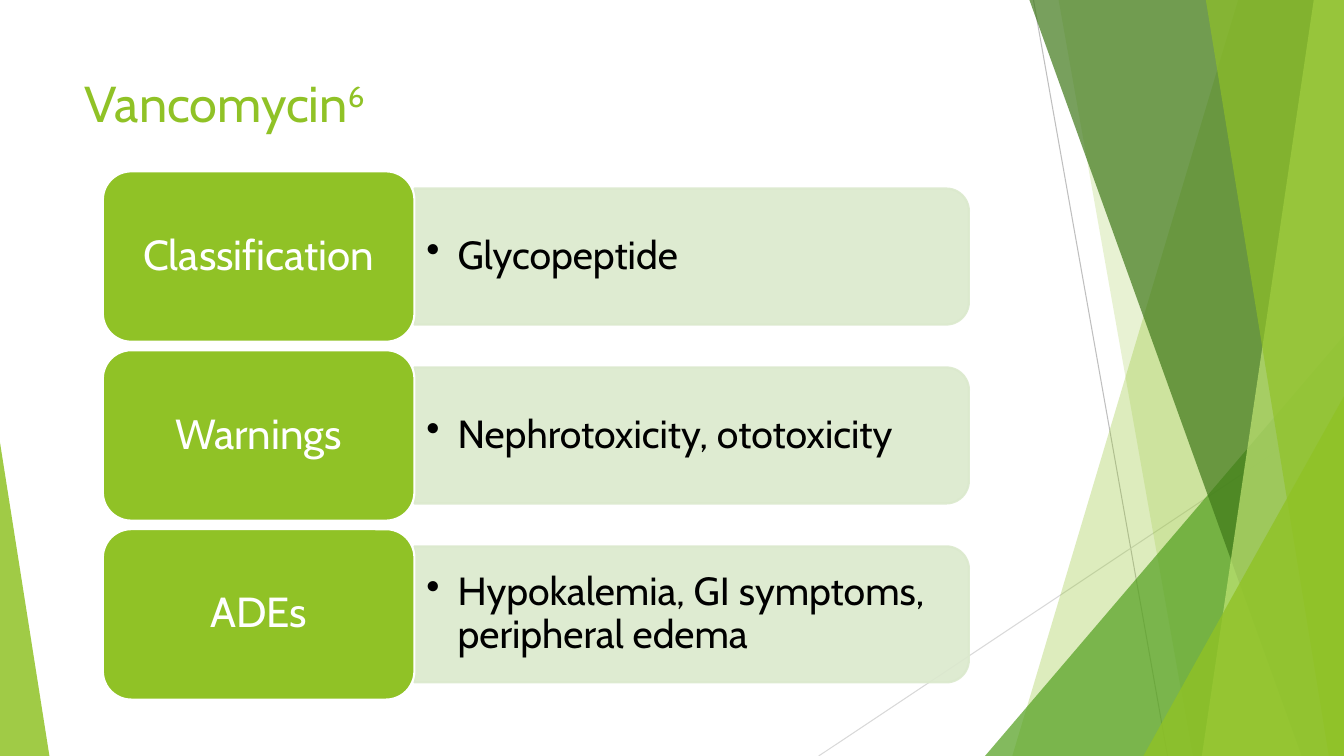
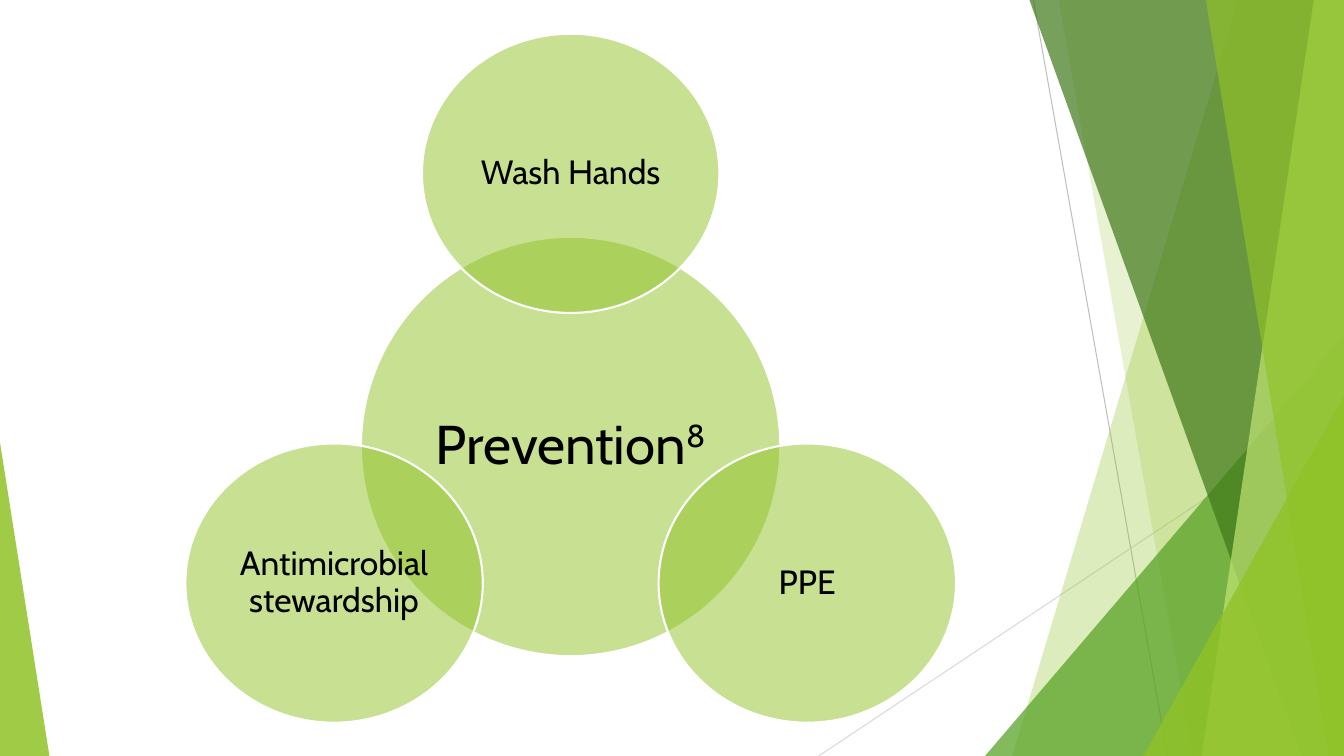
from math import cos, radians, sin

from lxml.etree import SubElement
from pptx import Presentation
from pptx.dml.color import RGBColor
from pptx.enum.shapes import MSO_CONNECTOR as Link, MSO_SHAPE as Shape
from pptx.enum.text import MSO_ANCHOR as Anchor, PP_ALIGN as Align
from pptx.oxml.ns import qn
from pptx.util import Inches, Pt

LIME = RGBColor(0x90, 0xC2, 0x26)
GREEN = RGBColor(0x54, 0xA0, 0x21)
DARK = RGBColor(0x3F, 0x78, 0x19)
PALE = RGBColor(0xC0, 0xE4, 0x74)
MIST = RGBColor(0xDB, 0xE9, 0xCD)
GREY = RGBColor(0xBF, 0xBF, 0xBF)
SILVER = RGBColor(0xD9, 0xD9, 0xD9)
WHITE = RGBColor(0xFF, 0xFF, 0xFF)
BLACK = RGBColor(0x00, 0x00, 0x00)
FONT = "Cabin"
WIDE, HIGH = 13.33, 7.5


def paint(shape, color, alpha=100, line=None):
    """Fill and outline a shape; alpha acts on every part in the fill colour."""
    shape.shadow.inherit = False
    shape.fill.solid()
    shape.fill.fore_color.rgb = color
    if line is None:
        shape.line.fill.background()
    else:
        shape.line.color.rgb = line
        shape.line.width = Pt(1.5)
    if alpha < 100:
        for node in shape._element.spPr.iter(qn("a:srgbClr")):
            if node.get("val") == str(color):
                SubElement(node, qn("a:alpha")).set("val", str(alpha * 1000))


def write(shape, text, size, color, sup="", align=Align.CENTER,
          anchor=Anchor.MIDDLE, inset=(0.05, 0.05), space=0.9):
    """Set one paragraph, with an optional superscript; return it."""
    frame = shape.text_frame
    frame.word_wrap = True
    frame.vertical_anchor = anchor
    frame.margin_left = frame.margin_right = Inches(inset[0])
    frame.margin_top = frame.margin_bottom = Inches(inset[1])
    para = frame.paragraphs[0]
    para.alignment = align
    para.line_spacing = space
    para.font.name = FONT
    para.font.size = Pt(size)
    para.font.color.rgb = color
    para.add_run().text = text
    if sup:
        run = para.add_run()
        run.text = sup
        run._r.get_or_add_rPr().set("baseline", "30000")
    return para


deck = Presentation()
deck.slide_width, deck.slide_height = Inches(WIDE), Inches(HIGH)
drug, care = [deck.slides.add_slide(deck.slide_layouts[6]) for _ in range(2)]

# Shared backdrop: two thin lines, then shards that reach the right edge
LINES = [(10.25, 0, 11.58, HIGH, GREY), (WIDE, 4.03, 8.12, HIGH, SILVER)]
# top x, top y, bottom x, colour, alpha
SHARDS = [
    (12.28, 0, 10.04, LIME, 30),
    (10.5, 0, 11.83, LIME, 20),
    (WIDE, 3.33, 9.77, GREEN, 72),
    (10.21, 0, 12.91, DARK, 70),
    (13.03, 0, 11.92, PALE, 70),
    (11.96, 0, 13.18, LIME, 65),
    (WIDE, 3.93, 11.34, LIME, 80),
]
for slide in (drug, care):
    for x1, y1, x2, y2, color in LINES:
        line = slide.shapes.add_connector(
            Link.STRAIGHT, Inches(x1), Inches(y1), Inches(x2), Inches(y2))
        line.line.color.rgb = color
        line.line.width = Pt(0.75)
        SubElement(line._element.spPr, qn("a:effectLst"))
    for top, y, low, color, alpha in SHARDS:
        if top == WIDE:
            shard = slide.shapes.add_shape(
                Shape.ISOSCELES_TRIANGLE, Inches(low), Inches(y),
                Inches(WIDE - low), Inches(HIGH - y))
            shard.adjustments[0] = 1
        else:
            pen = slide.shapes.build_freeform(Inches(top), Inches(y))
            pen.add_line_segments(
                [(Inches(WIDE), Inches(y)), (Inches(WIDE), Inches(HIGH)),
                 (Inches(low), Inches(HIGH))], close=True)
            shard = pen.convert_to_shape()
        paint(shard, color, alpha)
    wedge = slide.shapes.add_shape(
        Shape.ISOSCELES_TRIANGLE, 0, Inches(4.39), Inches(0.49), Inches(3.11))
    wedge.adjustments[0] = 0
    paint(wedge, LIME, 85)

# Slide 1: title
title = drug.shapes.add_textbox(
    Inches(0.74), Inches(0.67), Inches(9.4), Inches(1.44))
write(title, "Vancomycin", 36, LIME, "6", Align.LEFT, Anchor.TOP,
      (0.1, 0.05), 1.0)

# Slide 1: label boxes with a bar to the right of each
ROWS = [
    ("Classification", "Glycopeptide"),
    ("Warnings", "Nephrotoxicity, ototoxicity"),
    ("ADEs", "Hypokalemia, GI symptoms, peripheral edema"),
]
BOX_X, BOX_W, BOX_H, STEP = 1.02, 3.09, 1.69, 1.775
BAR_X, BAR_W, BAR_H, NOTE_H = BOX_X + BOX_W, 5.5, 1.35, 1.22
for i, (label, fact) in enumerate(ROWS):
    top = 1.7 + i * STEP
    mid = top + BOX_H / 2
    # The bar stands upright and is turned a quarter about its centre
    bar = drug.shapes.add_shape(
        Shape.ROUND_2_SAME_RECTANGLE,
        Inches(BAR_X + (BAR_W - BAR_H) / 2), Inches(mid - BAR_W / 2),
        Inches(BAR_H), Inches(BAR_W))
    bar.rotation = 90
    paint(bar, MIST, 90, MIST)
    note = drug.shapes.add_textbox(
        Inches(BAR_X), Inches(mid - NOTE_H / 2), Inches(5.43), Inches(NOTE_H))
    para = write(note, fact, 28, BLACK, align=Align.LEFT, inset=(0.12, 0.06))
    props = para._p.get_or_add_pPr()
    props.set("marL", str(Inches(0.31)))
    props.set("indent", str(Inches(-0.31)))
    bullet = SubElement(props, qn("a:buChar"))
    bullet.set("char", "•")
    props.insert_element_before(bullet, "a:defRPr")
    box = drug.shapes.add_shape(
        Shape.ROUNDED_RECTANGLE, Inches(BOX_X), Inches(top),
        Inches(BOX_W), Inches(BOX_H))
    paint(box, LIME, line=WHITE)
    write(box, label, 30, WHITE, inset=(0.12, 0.06))

# Slide 2: a hub with three circles at equal angles around it
HUB_X, HUB_Y, REACH = 5.66, 4.43, 2.71
# text, superscript, size, angle, distance, width, height
RINGS = [
    ("Prevention", "8", 39, 0, 0, 4.16, 4.16),
    ("Wash Hands", "", 24, -90, REACH, 2.95, 2.77),
    ("PPE", "", 24, 30, REACH, 2.95, 2.77),
    ("Antimicrobial stewardship", "", 24, 150, REACH, 2.95, 2.77),
]
for text, sup, size, angle, dist, wide, high in RINGS:
    x = HUB_X + dist * cos(radians(angle))
    y = HUB_Y + dist * sin(radians(angle))
    ring = care.shapes.add_shape(
        Shape.OVAL, Inches(x - wide / 2), Inches(y - high / 2),
        Inches(wide), Inches(high))
    paint(ring, LIME, 50, WHITE)
    write(ring, text, size, BLACK, sup, inset=(0.03, 0.03))

deck.save("out.pptx")
